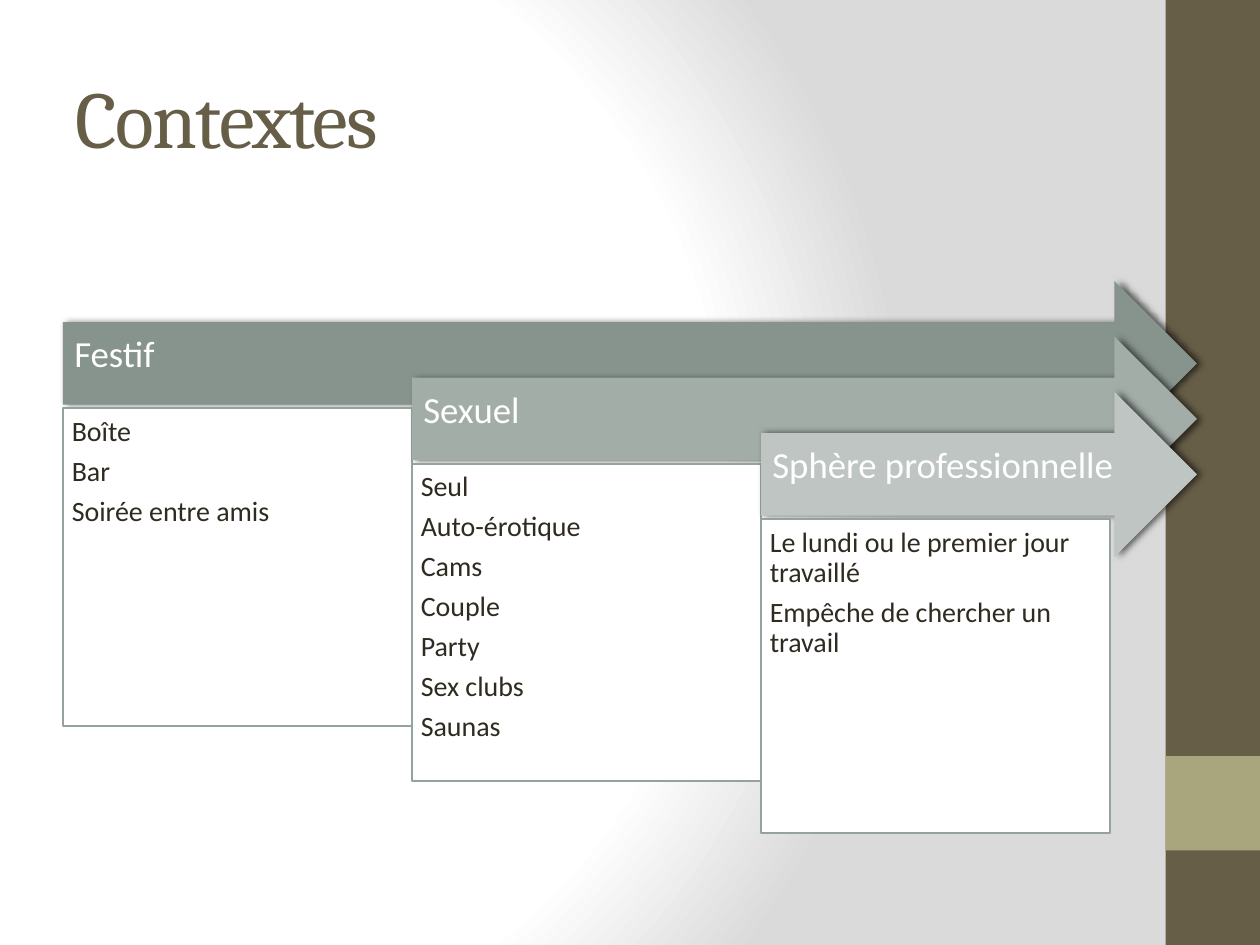
from pptx import Presentation
from pptx.dml.color import RGBColor
from pptx.enum.shapes import MSO_SHAPE
from pptx.enum.text import MSO_ANCHOR, PP_ALIGN
from pptx.oxml import parse_xml
from pptx.oxml.ns import nsdecls
from pptx.util import Inches, Pt

RECTANGLE, ARROW = MSO_SHAPE.RECTANGLE, MSO_SHAPE.RIGHT_ARROW
TOP, MIDDLE, LEFT = MSO_ANCHOR.TOP, MSO_ANCHOR.MIDDLE, PP_ALIGN.LEFT

BROWN = RGBColor(0x67, 0x5E, 0x47)
OLIVE = RGBColor(0xA9, 0xA5, 0x7C)
WHITE = RGBColor(0xFF, 0xFF, 0xFF)
DARK = RGBColor(0x2F, 0x2B, 0x20)
BORDER = RGBColor(0x95, 0xA3, 0x9D)
SAGE = RGBColor(0x87, 0x94, 0x8E)
SAGE_MID = RGBColor(0xA3, 0xAD, 0xA8)
SAGE_LIGHT = RGBColor(0xBE, 0xC5, 0xC2)

# Grid in inches: each context starts one column right and one step down
GRID_LEFT, GRID_TOP, GRID_RIGHT = 0.5, 2.23, 9.5
COLUMN, STEP = 2.77, 0.44
ARROW_HEIGHT, LIST_OFFSET = 1.31, 1.01
BAND_LEFT, BAND_WIDTH = 9.25, 0.75

HEADING = {"name": "Calibri", "size": Pt(21)}
ITEM = {"name": "Calibri", "size": Pt(16)}
TITLE = {"name": "Cambria", "size": Pt(46)}

CONTEXTS = [
    ("Festif", SAGE, 2.52, ["Boîte", "Bar", "Soirée entre amis"]),
    ("Sexuel", SAGE_MID, 2.52,
     ["Seul", "Auto-érotique", "Cams", "Couple", "Party", "Sex clubs", "Saunas"]),
    ("Sphère professionnelle", SAGE_LIGHT, 2.49,
     ["Le lundi ou le premier jour travaillé", "Empêche de chercher un travail"]),
]


def add_block(kind, left, top, width, height, color):
    shape = slide.shapes.add_shape(
        kind, Inches(left), Inches(top), Inches(width), Inches(height))
    shape.shadow.inherit = False
    shape.fill.solid()
    shape.fill.fore_color.rgb = color
    shape.line.fill.background()
    return shape


def write(shape, lines, font_values, color, anchor, margins):
    frame = shape.text_frame
    frame.word_wrap = True
    frame.vertical_anchor = anchor
    for side, margin in zip(("left", "top", "right", "bottom"), margins):
        setattr(frame, f"margin_{side}", Inches(margin))
    frame.text = "\n".join(lines)
    for paragraph in frame.paragraphs:
        paragraph.alignment = LEFT
        paragraph.line_spacing = 0.9
        paragraph.space_after = Pt(font_values["size"].pt * 0.35)
        font = paragraph.runs[0].font
        for name, value in font_values.items():
            setattr(font, name, value)
        font.color.rgb = color


presentation = Presentation()
presentation.slide_width = Inches(10)
presentation.slide_height = Inches(7.5)
slide = presentation.slides.add_slide(presentation.slide_layouts[5])

# Background: radial gradient from white to grey
slide.element.cSld.insert(0, parse_xml(
    f'<p:bg {nsdecls("p", "a")}><p:bgPr><a:gradFill rotWithShape="1"><a:gsLst>'
    '<a:gs pos="0"><a:srgbClr val="FFFFFF"/></a:gs>'
    '<a:gs pos="75000"><a:srgbClr val="FFFFFF"/></a:gs>'
    '<a:gs pos="100000"><a:srgbClr val="DADADA"/></a:gs></a:gsLst>'
    '<a:path path="circle">'
    '<a:fillToRect l="20000" t="50000" r="100000" b="50000"/></a:path>'
    '</a:gradFill><a:effectLst/></p:bgPr></p:bg>'))

# Side band
add_block(RECTANGLE, BAND_LEFT, 0, BAND_WIDTH, 7.5, BROWN)
add_block(RECTANGLE, BAND_LEFT, 6, BAND_WIDTH, BAND_WIDTH, OLIVE)

# Title
title = slide.shapes.title
title.left, title.top = Inches(0.5), Inches(0.3)
title.width, title.height = Inches(8.33), Inches(1.25)
write(title, ["Contextes"], TITLE, BROWN, MIDDLE, (0.1, 0.05, 0.1, 0.05))
title_paragraph = title.text_frame.paragraphs[0]
title_paragraph.line_spacing = 1.0
title_paragraph.space_after = Pt(0)
title_paragraph.runs[0].font._element.set("spc", "-100")

# Contexts: an arrow heading above a list box
for index, (heading, color, list_height, items) in enumerate(CONTEXTS):
    left = GRID_LEFT + index * COLUMN
    top = GRID_TOP + index * STEP

    arrow = add_block(ARROW, left, top, GRID_RIGHT - left, ARROW_HEIGHT, color)
    write(arrow, [heading], HEADING, WHITE, MIDDLE, (0.09, 0.09, 0.28, 0.21))
    effects = arrow.element.spPr.find(
        "{http://schemas.openxmlformats.org/drawingml/2006/main}effectLst")
    effects.append(parse_xml(
        f'<a:outerShdw {nsdecls("a")} blurRad="{Pt(4)}" dist="{Pt(2)}" dir="0" '
        'rotWithShape="0"><a:srgbClr val="000000"><a:alpha val="60000"/>'
        '</a:srgbClr></a:outerShdw>'))

    box = add_block(RECTANGLE, left, top + LIST_OFFSET, COLUMN, list_height, WHITE)
    box.line.color.rgb = BORDER
    box.line.width = Pt(1)
    write(box, items, ITEM, DARK, TOP, (0.07, 0.07, 0.07, 0.07))

presentation.save("out.pptx")
